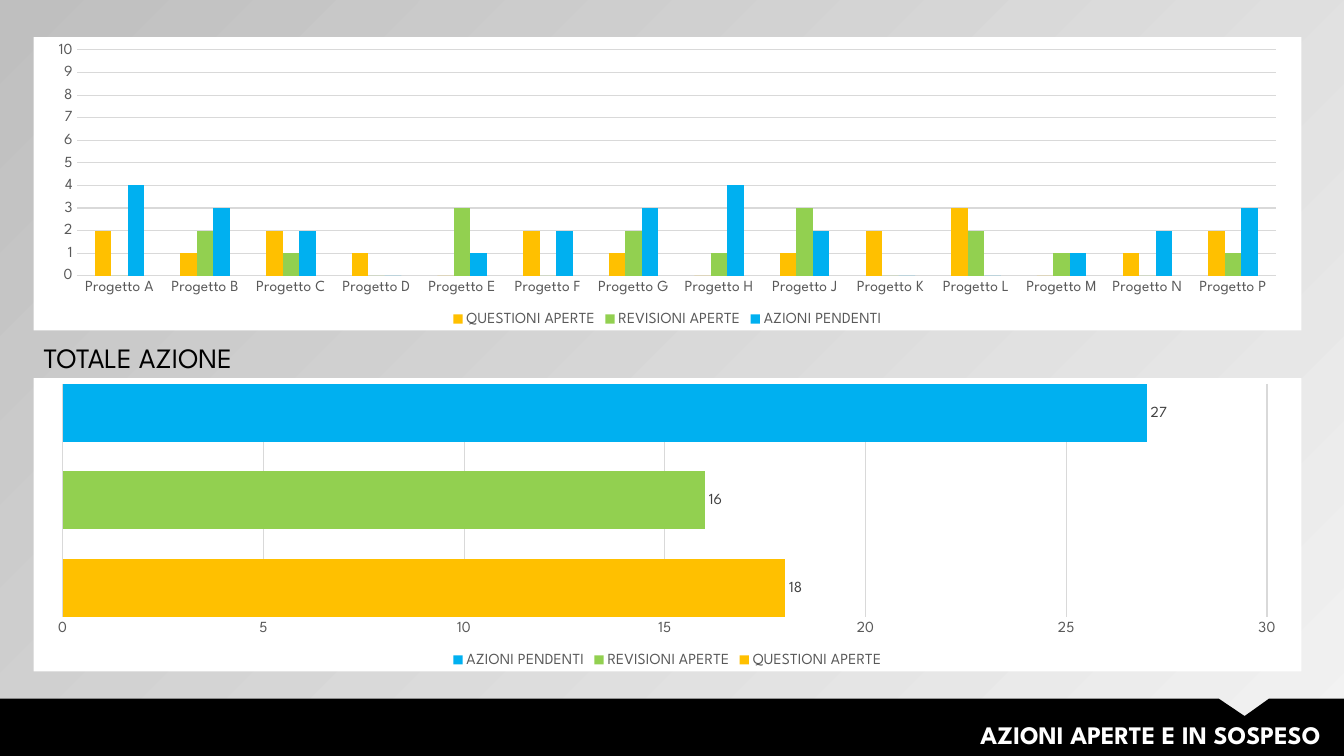
import dataclasses

import lxml.etree
import pptx
import pptx.chart.data
import pptx.dml.color
import pptx.enum.chart
import pptx.enum.text
import pptx.oxml
import pptx.oxml.ns
import pptx.util

Pt = pptx.util.Pt
RGB = pptx.dml.color.RGBColor.from_string
qn = pptx.oxml.ns.qn
XL = pptx.enum.chart
TEXT = pptx.enum.text


@dataclasses.dataclass(frozen=True)
class Theme:
    """Fonts, colours and type sizes of the slide."""
    font: str = "League Spartan"
    black: str = "000000"
    white: str = "FFFFFF"
    grid: str = "D9D9D9"
    axis: str = "595959"
    label: str = "404040"
    light: str = "F2F2F2"
    dark: str = "BFBFBF"
    issues: str = "FFC000"
    reviews: str = "92D050"
    actions: str = "00B0F0"
    chart_size: float = 11
    title_size: float = 18
    heading_size: float = 20


class Deck:
    """Draws styled elements on the current slide."""

    def __init__(self, prs, theme):
        self.theme = theme
        self.s = prs.slides.add_slide(prs.slide_layouts[6])

    def apply(self, target, **values):
        for name, value in values.items():
            setattr(target, name, value)

    def style_font(self, font, size, color, bold=False):
        self.apply(font, name=self.theme.font, size=Pt(size), bold=bold)
        font.color.rgb = RGB(color)

    def background(self, angle, alpha):
        fill = self.s.background.fill
        fill.gradient()
        fill.gradient_angle = angle
        colors = (self.theme.light, self.theme.dark)
        for stop, position, color in zip(fill.gradient_stops, (0, 1), colors):
            stop.position = position
            stop.color.rgb = RGB(color)
        first = next(self.s.background.fill._fill._gradFill.iter(qn("a:srgbClr")))
        lxml.etree.SubElement(first, qn("a:alpha")).set("val", str(alpha * 1000))

    def outline(self, points, color):
        builder = self.s.shapes.build_freeform(
            *[Pt(v) for v in points[0]], scale=1.0)
        builder.add_line_segments([(Pt(x), Pt(y)) for x, y in points[1:]])
        sp = builder.convert_to_shape()
        sp.shadow.inherit = False
        sp.fill.solid()
        sp.fill.fore_color.rgb = RGB(color)
        sp.line.fill.background()

    def text(self, box, words, size, color, bold=False, wrap=True,
             align=TEXT.PP_ALIGN.LEFT):
        tf = self.s.shapes.add_textbox(*map(Pt, box)).text_frame
        self.apply(tf, word_wrap=wrap,
                   auto_size=TEXT.MSO_AUTO_SIZE.SHAPE_TO_FIT_TEXT)
        p = tf.paragraphs[0]
        p.alignment = align
        r = p.add_run()
        r.text = words
        self.style_font(r.font, size, color, bold)

    def line(self, line):
        line.color.rgb = RGB(self.theme.grid)
        line.width = Pt(0.75)

    def chart(self, kind, box, layout, cats, series, gap, overlap):
        t = self.theme
        data = pptx.chart.data.CategoryChartData(number_format="0")
        data.categories = cats
        for name, color, values in series:
            data.add_series(name, values)
        chart = self.s.shapes.add_chart(kind, *map(Pt, box), data).chart
        self.apply(chart, has_title=False, has_legend=True)
        self.style_font(chart.font, t.chart_size, t.black)
        self.apply(chart.legend, include_in_layout=False,
                   position=XL.XL_LEGEND_POSITION.BOTTOM)
        self.style_font(chart.legend.font, t.chart_size, t.axis)
        self.apply(chart.plots[0], gap_width=gap, overlap=overlap,
                   vary_by_categories=False)
        for ser, (name, color, values) in zip(chart.plots[0].series, series):
            ser.format.fill.solid()
            ser.format.fill.fore_color.rgb = RGB(color)
        for axis in (chart.category_axis, chart.value_axis):
            self.apply(axis, major_tick_mark=XL.XL_TICK_MARK.NONE,
                       minor_tick_mark=XL.XL_TICK_MARK.NONE)
            self.style_font(axis.tick_labels.font, t.chart_size, t.axis)
        self.line(chart.category_axis.format.line)
        self.apply(chart.value_axis, has_major_gridlines=True, minimum_scale=0)
        self.apply(chart.value_axis.tick_labels, number_format="0",
                   number_format_is_linked=False)
        self.line(chart.value_axis.major_gridlines.format.line)
        chart.value_axis.format.line.fill.background()
        self.chart_frame(chart, layout)
        return chart

    def chart_frame(self, chart, layout):
        space = chart._chartSpace
        space.find(qn("c:txPr")).addprevious(pptx.oxml.parse_xml(
            f'<c:spPr {pptx.oxml.ns.nsdecls("c", "a")}><a:solidFill>'
            f'<a:srgbClr val="{self.theme.white}"/></a:solidFill>'
            '<a:ln><a:noFill/></a:ln></c:spPr>'))
        area = space.find(".//" + qn("c:plotArea"))
        for old in area.findall(qn("c:layout")):
            area.remove(old)
        modes = [("layoutTarget", "inner"), ("xMode", "edge"), ("yMode", "edge")]
        parts = "".join(f'<c:{tag} val="{value}"/>'
                        for tag, value in modes + list(zip("xywh", layout)))
        area.insert(0, pptx.oxml.parse_xml(
            f'<c:layout {pptx.oxml.ns.nsdecls("c")}><c:manualLayout>'
            f'{parts}</c:manualLayout></c:layout>'))

    def value_labels(self, chart):
        for ser in chart.plots[0].series:
            labels = ser.data_labels
            self.apply(labels, show_value=True, number_format="0",
                       number_format_is_linked=False,
                       position=XL.XL_LABEL_POSITION.OUTSIDE_END)
            self.style_font(labels.font, self.theme.chart_size, self.theme.label)


def main():
    prs = pptx.Presentation()
    prs.slide_width, prs.slide_height = Pt(960), Pt(540)
    theme = Theme()
    deck = Deck(prs, theme)
    deck.background(135, 40)
    deck.outline([(0, 499), (870.5, 499), (889, 511.5), (906.5, 499),
                  (960, 499), (960, 540), (0, 540), (0, 499)], theme.black)
    deck.text((298, 510, 652.5, 29), "AZIONI APERTE E IN SOSPESO",
              theme.title_size, theme.white, bold=True,
              align=TEXT.PP_ALIGN.RIGHT)

    series = [
        ("QUESTIONI APERTE", theme.issues, [2, 1, 2, 1, 0, 2, 1, 0, 1, 2, 3, 0, 1, 2]),
        ("REVISIONI APERTE", theme.reviews, [0, 2, 1, 0, 3, 0, 2, 1, 3, 0, 2, 1, 0, 1]),
        ("AZIONI PENDENTI", theme.actions, [4, 3, 2, 0, 1, 2, 3, 4, 2, 0, 0, 1, 2, 3]),
    ]
    projects = [f"Progetto {letter}" for letter in "ABCDEFGHJKLMNP"]
    by_project = deck.chart(
        XL.XL_CHART_TYPE.COLUMN_CLUSTERED, (24, 26.5, 905.5, 209.5),
        (0.034, 0.044, 0.946, 0.77), projects, series, gap=219, overlap=0)
    by_project.value_axis.maximum_scale = 10

    totals = [(name, color, [sum(values)]) for name, color, values in series]
    total = deck.chart(
        XL.XL_CHART_TYPE.BAR_CLUSTERED, (24, 270, 905.5, 209.5),
        (0.023, 0.02, 0.95, 0.795), ["1"], totals, gap=0, overlap=-50)
    total.category_axis.visible = False
    deck.value_labels(total)
    deck.text((24, 240, 156, 31.5), "TOTALE AZIONE", theme.heading_size,
              theme.black, wrap=False)
    prs.save("out.pptx")


if __name__ == "__main__":
    main()
